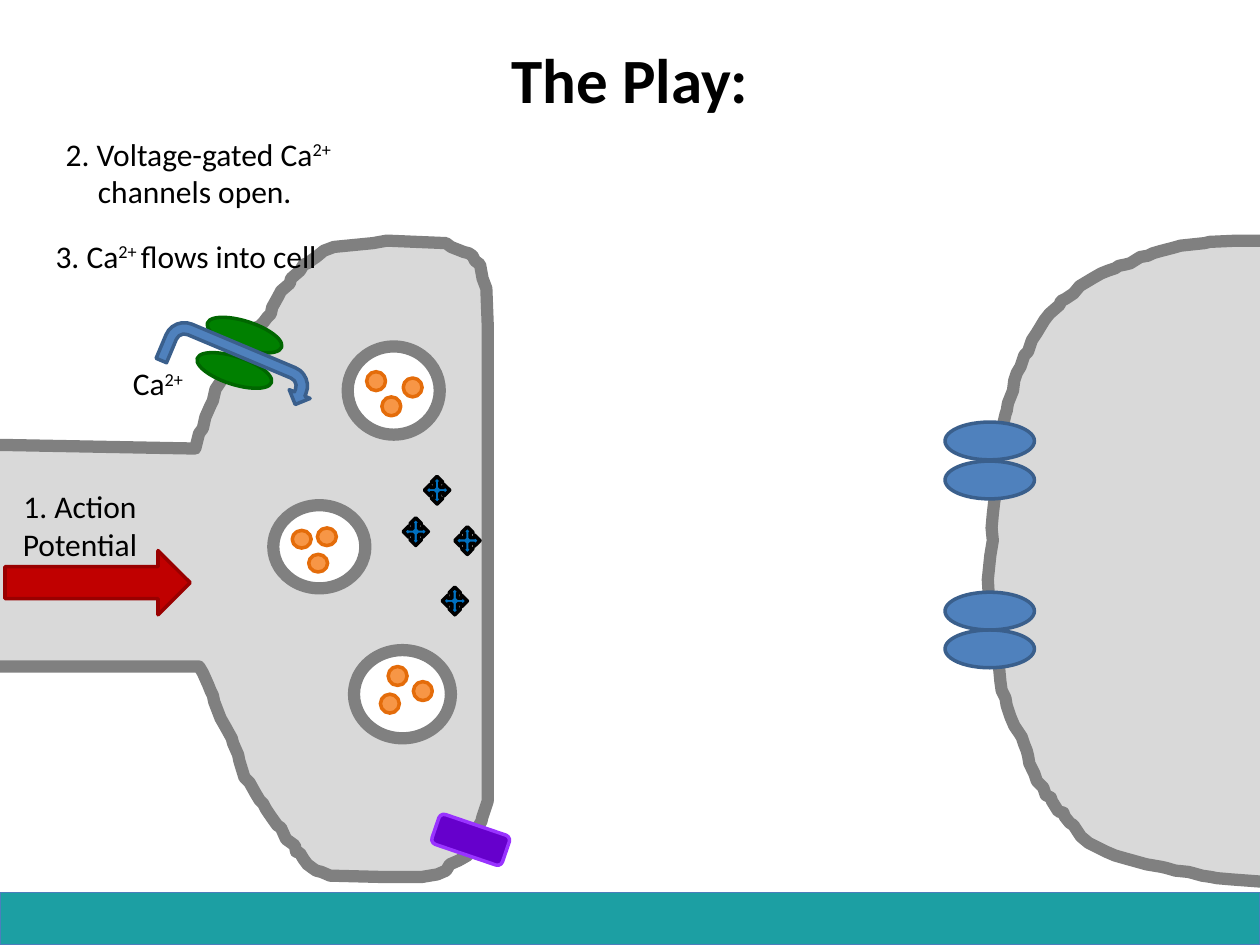
from pptx import Presentation
from pptx.dml.color import RGBColor
from pptx.enum.shapes import MSO_SHAPE
from pptx.enum.text import MSO_ANCHOR, MSO_AUTO_SIZE, PP_ALIGN
from pptx.util import Pt

COLORS = {
    "black": "000000", "white": "FFFFFF",
    "footer": "1C9FA3", "footer_line": "4B7EBC",
    "cell": "D9D9D9", "membrane": "808080",
    "channel": "008000", "channel_line": "006600",
    "transmitter": "F79646", "transmitter_line": "E46C0A",
    "signal": "C00000", "signal_line": "990000",
    "blue": "4F81BD", "blue_line": "3A5F8C",
    "pump": "6600CC", "pump_line": "9933FF",
    "calcium": "0070C0",
}
FONT = "Calibri"

# Cell outlines, in hundredths of an inch (0.72 pt)
OUTLINE_UNIT = Pt(0.72)
AXON_TERMINAL = [
    (-7, 353), (155, 356), (158, 344), (161, 340), (163, 331), (167, 322),
    (169, 318), (171, 309), (177, 300), (185, 288), (190, 280), (194, 272),
    (200, 265), (203, 260), (206, 259), (209, 256), (212, 252), (215, 249),
    (216, 244), (221, 235), (223, 231), (230, 225), (231, 221), (238, 215),
    (241, 210), (244, 209), (248, 206), (251, 204), (257, 199), (265, 196),
    (296, 193), (307, 191), (354, 193), (358, 196), (368, 200), (372, 201),
    (375, 203), (377, 207), (381, 210), (383, 221), (386, 229), (387, 256),
    (387, 636), (383, 648), (382, 652), (379, 657), (377, 661), (373, 670),
    (371, 679), (364, 683), (357, 686), (354, 691), (347, 694), (335, 696),
    (302, 696), (262, 695), (255, 692), (251, 691), (248, 689), (244, 686),
    (241, 682), (238, 677), (235, 676), (234, 671), (227, 666), (223, 657),
    (220, 655), (215, 648), (211, 642), (209, 638), (206, 635), (203, 630),
    (198, 621), (194, 617), (190, 604), (189, 599), (185, 590), (184, 586),
    (179, 577), (175, 570), (170, 557), (169, 552), (167, 548), (165, 543),
    (161, 534), (158, 529), (-8, 529),
]
RECEIVING_CELL = [
    (1005, 700), (978, 698), (966, 697), (961, 696), (954, 695), (947, 693),
    (943, 692), (933, 691), (926, 689), (922, 688), (910, 686), (892, 681),
    (885, 679), (878, 676), (872, 673), (864, 669), (858, 664), (856, 661),
    (852, 655), (849, 653), (845, 648), (844, 645), (840, 644), (835, 636),
    (834, 633), (830, 631), (828, 625), (823, 620), (821, 614), (817, 606),
    (816, 600), (815, 596), (813, 591), (811, 585), (809, 582), (805, 576),
    (802, 569), (800, 563), (799, 560), (798, 554), (795, 548), (794, 541),
    (792, 520), (789, 514), (788, 511), (787, 495), (786, 492), (784, 460),
    (786, 441), (788, 429), (787, 419), (788, 408), (789, 399), (790, 393),
    (792, 369), (793, 361), (794, 348), (795, 342), (798, 329), (799, 326),
    (800, 320), (804, 310), (805, 302), (807, 296), (810, 291), (812, 285),
    (813, 282), (816, 279), (818, 273), (819, 270), (821, 267), (823, 264),
    (829, 254), (833, 249), (841, 242), (842, 239), (846, 237), (852, 233),
    (857, 227), (867, 221), (874, 217), (879, 215), (885, 213), (888, 211),
    (893, 210), (897, 209), (905, 204), (911, 203), (915, 201), (922, 199),
    (930, 197), (937, 195), (956, 193), (960, 192), (982, 191), (1008, 191),
]

# Vesicles: left, top, width, height, then the transmitters' size and corners
VESICLES = [
    ((198.7, 198, 52.6, 50.4), (10.8, 10.8),
     [(209.5, 212.4), (230.4, 216), (218.2, 226.8)]),
    ((156.2, 288.7, 52.6, 47.5), (10.8, 10.1),
     [(167, 303.1), (181.4, 301.7), (176.4, 316.8)]),
    ((202.3, 371.5, 55.4, 50.4), (10.8, 10.8),
     [(221.8, 380.9), (236.2, 389.5), (217.4, 396.7)]),
]
CALCIUM_IONS = [(230.4, 295.9), (242.6, 272.2), (259.9, 301), (252.7, 335.5)]


def rgb(name):
    return RGBColor.from_string(COLORS[name])


def paint(sp, fill, line, width):
    sp.shadow.inherit = False
    sp.fill.solid()
    sp.fill.fore_color.rgb = rgb(fill)
    sp.line.color.rgb = rgb(line)
    sp.line.width = Pt(width)


def add_preset(shapes, kind, box, fill, line, width=2, rotation=0):
    sp = shapes.add_shape(kind, *map(Pt, box))
    sp.rotation = rotation
    paint(sp, fill, line, width)


def add_cell(shapes, points):
    builder = shapes.build_freeform(*points[0], scale=OUTLINE_UNIT)
    builder.add_line_segments(points[1:], close=True)
    paint(builder.convert_to_shape(), "cell", "membrane", 7)


def add_vesicle(shapes, box, size, corners):
    group = shapes.add_group_shape().shapes
    add_preset(group, MSO_SHAPE.OVAL, box, "white", "membrane", 7)
    for corner in corners:
        add_preset(group, MSO_SHAPE.OVAL, corner + size,
                   "transmitter", "transmitter_line")


def add_text(shapes, box, *runs, size=18, bold=False):
    """Add centred text; every second run is superscript."""
    sp = shapes.add_textbox(*map(Pt, box))
    tf = sp.text_frame
    tf.word_wrap = True
    tf.auto_size = MSO_AUTO_SIZE.NONE
    p = tf.paragraphs[0]
    p.alignment = PP_ALIGN.CENTER
    for i, text in enumerate(runs):
        r = p.add_run()
        r.text = text
        r.font.name = FONT
        r.font.size = Pt(size)
        r.font.bold = bold
        r.font.color.rgb = rgb("black")
        if i % 2:
            r.font._element.set("baseline", "30000")
    return tf


def main():
    prs = Presentation()
    prs.slide_width, prs.slide_height = Pt(720), Pt(540)
    shapes = prs.slides.add_slide(prs.slide_layouts[6]).shapes

    # Footer band and title
    add_preset(shapes, MSO_SHAPE.RECTANGLE, (0, 509.8, 720, 30.2),
               "footer", "footer_line", 0.75)
    tf = add_text(shapes, (0, 0, 720, 90), "The Play:", size=36, bold=True)
    tf.vertical_anchor = MSO_ANCHOR.MIDDLE

    # The two cells
    add_cell(shapes, AXON_TERMINAL)
    add_cell(shapes, RECEIVING_CELL)

    # Calcium channel and vesicles
    for corner in ((131.8, 169.2), (126, 189.4)):
        add_preset(shapes, MSO_SHAPE.OVAL, corner + (15.8, 44.6),
                   "channel", "channel_line", rotation=108)
    for vesicle in VESICLES:
        add_vesicle(shapes, *vesicle)

    # Action potential and calcium inflow
    add_preset(shapes, MSO_SHAPE.RIGHT_ARROW, (2.9, 314.6, 105.8, 36.7),
               "signal", "signal_line")
    add_text(shapes, (-5.8, 275, 103, 51.1), "1. Action Potential")
    add_text(shapes, (66.2, 204.5, 48.2, 28.8), "Ca", "2+")
    add_preset(shapes, MSO_SHAPE.U_TURN_ARROW, (90.7, 197.3, 90, 25.9),
               "blue", "blue_line", rotation=22.8)

    # Receptors, pump and calcium ions
    for top in (360, 338.4, 263.5, 241.2):
        add_preset(shapes, MSO_SHAPE.OVAL, (540, top, 51.1, 21.6),
                   "blue", "blue_line")
    add_preset(shapes, MSO_SHAPE.ROUNDED_RECTANGLE, (247.7, 470.9, 42.5, 18),
               "pump", "pump_line", rotation=18.8)
    for corner in CALCIUM_IONS:
        add_preset(shapes, MSO_SHAPE.QUAD_ARROW, corner + (14.4, 15.8),
                   "calcium", "black")

    # Steps
    add_text(shapes, (23, 73.4, 180.7, 51.1),
             "2. Voltage-gated Ca", "2+ ", "channels open. ")
    add_text(shapes, (18, 131.8, 180.7, 28.8),
             "3. Ca", "2+ ", "flows into cell ")

    prs.save("out.pptx")


if __name__ == "__main__":
    main()
